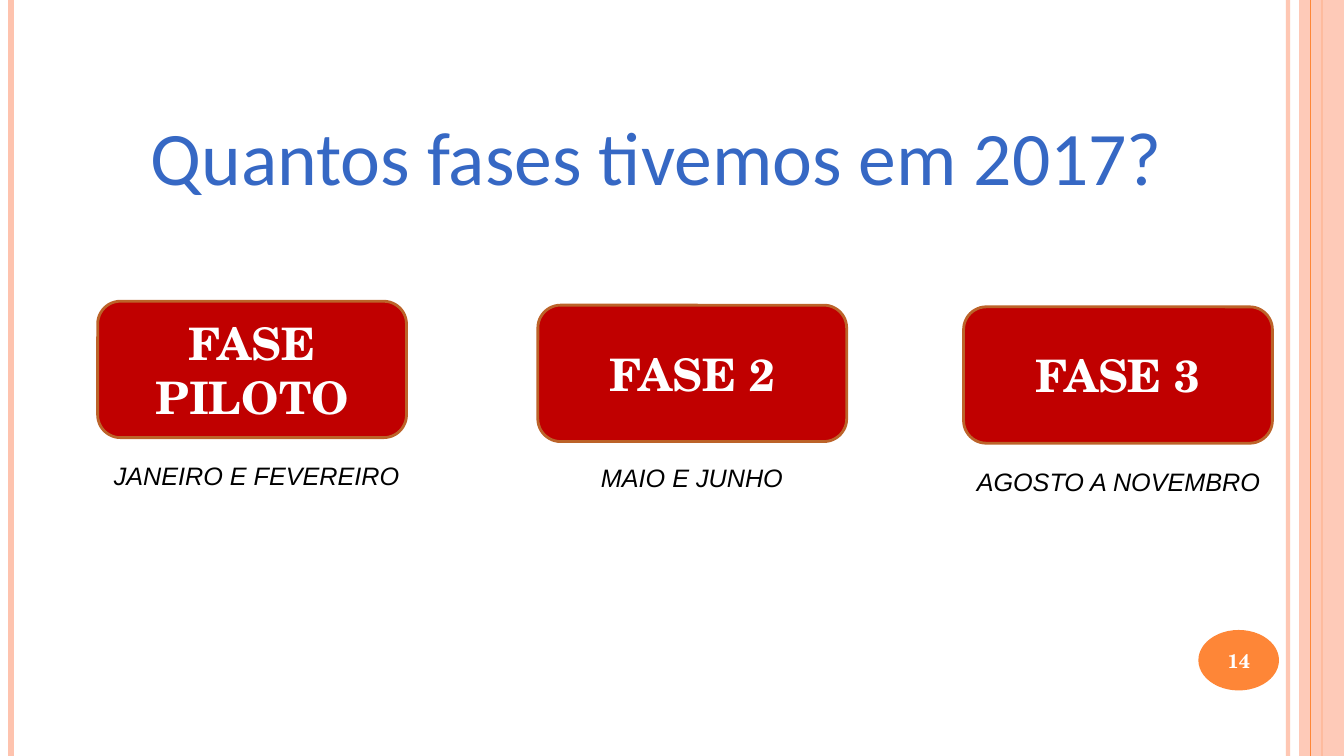
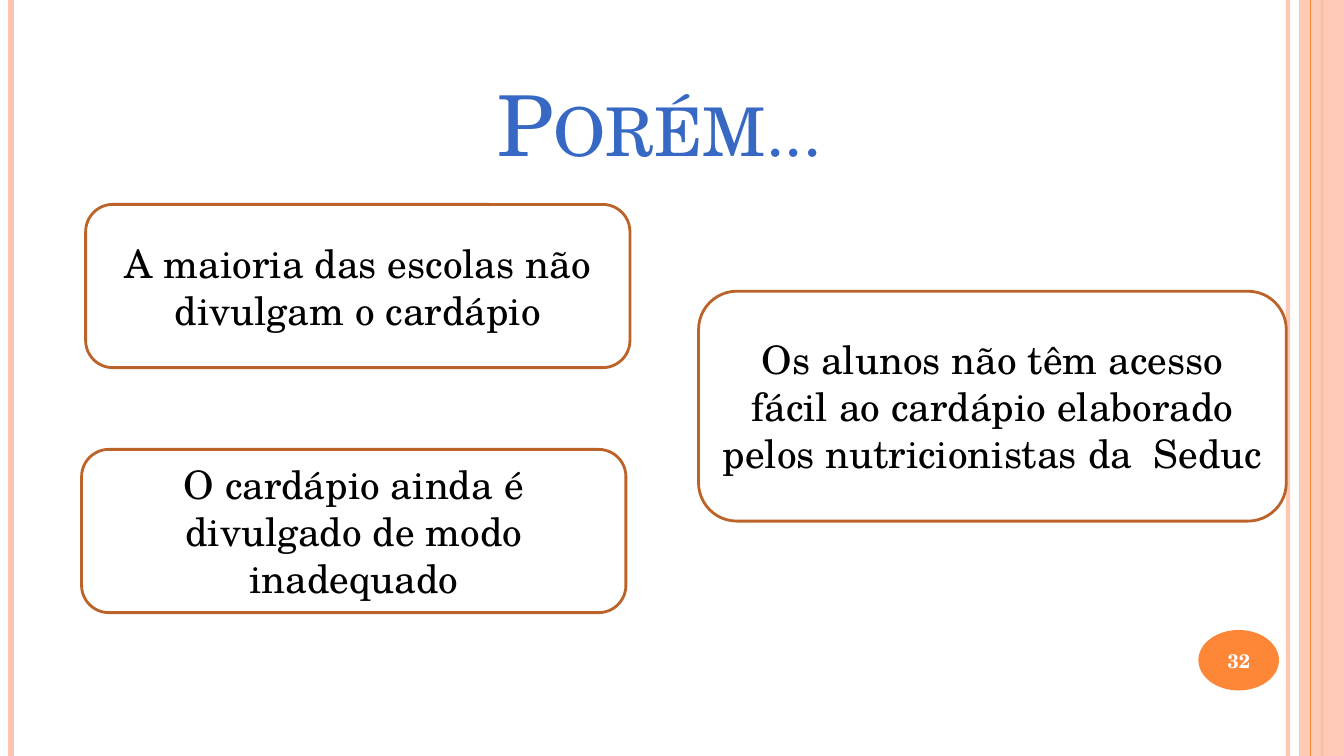
from lxml import etree
from pptx import Presentation
from pptx.dml.color import RGBColor
from pptx.enum.shapes import MSO_CONNECTOR, MSO_SHAPE
from pptx.enum.text import MSO_ANCHOR, MSO_AUTO_SIZE, PP_ALIGN
from pptx.oxml.ns import qn
from pptx.util import Pt

PEACH = RGBColor(0xFE, 0xC3, 0xAE)
ORANGE = RGBColor(0xFE, 0x86, 0x37)
RUST = RGBColor(0xBC, 0x63, 0x29)
RED = RGBColor(0xC0, 0x00, 0x00)
BLUE = RGBColor(0x36, 0x68, 0xC4)
BLACK = RGBColor(0x00, 0x00, 0x00)
WHITE = RGBColor(0xFF, 0xFF, 0xFF)
SERIF = "TeX Gyre Schola"
WIDTH, HEIGHT = 960, 540


def write(shape, text, font, size, color, anchor, align=PP_ALIGN.CENTER,
          bold=False, italic=False):
    """Fill a shape with one formatted paragraph."""
    frame = shape.text_frame
    frame.word_wrap = True
    frame.auto_size = MSO_AUTO_SIZE.NONE
    frame.vertical_anchor = anchor
    frame.text = text
    paragraph = frame.paragraphs[0]
    paragraph.alignment = align
    paragraph.font.name = font
    paragraph.font.size = Pt(size)
    paragraph.font.color.rgb = color
    paragraph.font.bold = bold
    paragraph.font.italic = italic


def rounded_box(slide, text, place, fill, color, size, bold=False):
    """Add a rust-edged rounded box with centred text."""
    box = slide.shapes.add_shape(MSO_SHAPE.ROUNDED_RECTANGLE, *map(Pt, place))
    box.shadow.inherit = False
    box.fill.solid()
    box.fill.fore_color.rgb = fill
    box.line.color.rgb = RUST
    box.line.width = Pt(2)
    write(box, text, SERIF, size, color, MSO_ANCHOR.MIDDLE, bold=bold)


prs = Presentation()
prs.slide_width, prs.slide_height = Pt(WIDTH), Pt(HEIGHT)
title_only = prs.slide_layouts[5]
phases = prs.slides.add_slide(title_only)
problems = prs.slides.add_slide(title_only)

# Edge stripes, side band and number disc, moved to the master
stripes = []
for x, color, weight in [(920, PEACH, 3), (8, PEACH, 4.5),
                         (944, ORANGE, 1.5), (936, ORANGE, 0.75)]:
    stripe = phases.shapes.add_connector(
        MSO_CONNECTOR.STRAIGHT, Pt(x), Pt(0), Pt(x), Pt(HEIGHT))
    stripe.line.color.rgb = color
    stripe.line.width = Pt(weight)
    etree.SubElement(stripe.element.spPr, qn("a:effectLst"))
    stripes.append(stripe)

side_band = phases.shapes.add_shape(
    MSO_SHAPE.RECTANGLE, Pt(928), Pt(0), Pt(WIDTH - 928), Pt(HEIGHT))
number_disc = phases.shapes.add_shape(
    MSO_SHAPE.OVAL, Pt(856), Pt(450), Pt(57.6), Pt(43.2))
for part, color in [(side_band, PEACH), (number_disc, ORANGE)]:
    part.shadow.inherit = False
    part.fill.solid()
    part.fill.fore_color.rgb = color
    part.line.fill.background()

for part, opacity in [(stripes[0], 93), (side_band, 87)]:
    tint = next(part.element.iter(qn("a:srgbClr")))
    etree.SubElement(tint, qn("a:alpha"), val=str(opacity * 1000))

master_tree = prs.slide_master.shapes.element
frame_parts = [*stripes[:3], side_band, stripes[3], number_disc]
for part_id, part in enumerate(frame_parts, start=100):
    next(part.element.iter(qn("p:cNvPr"))).set("id", str(part_id))
    master_tree.append(part.element)

# Titles and page numbers
for slide, heading, font, size, place, number in [
    (phases, "Quantos fases tivemos em 2017?", "Calibri", 54,
     (0, 93.6, 938, 53.3), "14"),
    (problems, "Porém...", SERIF, 60, (248.4, 45.4, 445.7, 82), "32"),
]:
    title = slide.shapes.title
    title.left, title.top, title.width, title.height = map(Pt, place)
    write(title, heading, font, size, BLUE, MSO_ANCHOR.BOTTOM)
    page_number = slide.shapes.add_textbox(Pt(853), Pt(451.4), Pt(64), Pt(41))
    write(page_number, number, SERIF, 14, WHITE, MSO_ANCHOR.MIDDLE, bold=True)

small_caps = problems.shapes.title.text_frame.paragraphs[0].runs[0]
small_caps.font.size = Pt(60)
next(small_caps._r.iter(qn("a:rPr"))).set("cap", "small")

# Slide 1: the three phases with their months
for phase, x, y, months, months_x, months_y, align in [
    ("FASE PILOTO", 69.8, 215.2, "JANEIRO E FEVEREIRO", 74.2, 325.4, PP_ALIGN.LEFT),
    ("FASE 2", 384.2, 218, "MAIO E JUNHO", 381.6, 326.9, PP_ALIGN.CENTER),
    ("FASE 3", 688.3, 219.2, "AGOSTO A NOVEMBRO", 686.2, 329.2, PP_ALIGN.CENTER),
]:
    rounded_box(phases, phase, (x, y, 220.6, 97.4), RED, WHITE, 32, bold=True)
    period = phases.shapes.add_textbox(
        Pt(months_x), Pt(months_y), Pt(225.4), Pt(29))
    write(period, months, "Arial", 18, BLACK, MSO_ANCHOR.TOP, align, italic=True)

# Slide 2: the problems found
for problem, place in [
    ("O cardápio ainda é divulgado de modo inadequado",
     (58.3, 321, 388.8, 116.6)),
    ("Os alunos não têm acesso fácil ao cardápio elaborado pelos "
     "nutricionistas da  Seduc", (499, 208, 419.8, 164.2)),
    ("A maioria das escolas não divulgam o cardápio",
     (61.2, 146, 388.8, 116.6)),
]:
    rounded_box(problems, problem, place, WHITE, BLACK, 28)

prs.save("out.pptx")
